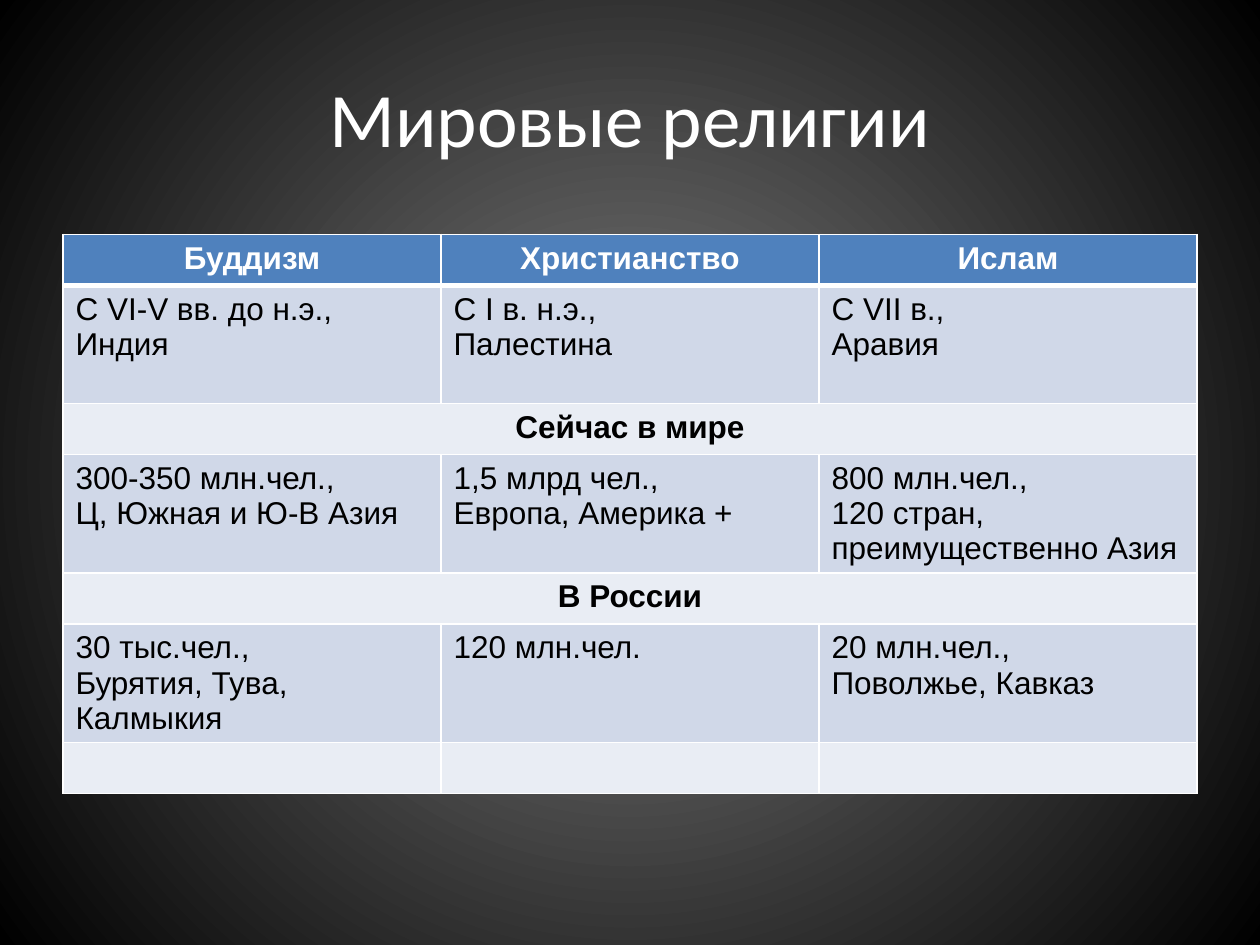
"""Build a slide with a table comparing three world religions."""
import lxml.etree
import pptx
import pptx.dml.color
import pptx.enum.text
import pptx.oxml
import pptx.oxml.ns
import pptx.util

Pt = pptx.util.Pt
COLORS = {
    name: pptx.dml.color.RGBColor.from_string(value)
    for name, value in {
        "center": "7F7F7F", "edge": "000000", "white": "FFFFFF", "black": "000000",
        "header": "4F81BD", "band": "D0D8E8", "light": "E9EDF4",
    }.items()
}
ROWS = [
    ["Буддизм", "Христианство", "Ислам"],
    ["C VI-V вв. до н.э.,\vИндия", "С I в. н.э.,\vПалестина", "С VII в.,\vАравия"],
    ["Сейчас в мире"],
    ["300-350 млн.чел.,\vЦ, Южная и Ю-В Азия", "1,5 млрд чел.,\vЕвропа, Америка +",
     "800 млн.чел.,\n120 стран, преимущественно Азия"],
    ["В России"],
    ["30 тыс.чел.,\vБурятия, Тува, Калмыкия", "120 млн.чел.",
     "20 млн.чел.,\nПоволжье, Кавказ"],
    ["", "", ""],
]
COLUMN_WIDTH, SHORT_ROW, TALL_ROW = 216, 29.2, 67.3
NAMESPACE = pptx.oxml.ns.nsdecls("a")


def format_paragraph(paragraph, font, size, color, bold, centered):
    paragraph.font.name = font
    paragraph.font.size = Pt(size)
    paragraph.font.bold = bold
    paragraph.font.color.rgb = COLORS[color]
    alignment = pptx.enum.text.PP_ALIGN
    paragraph.alignment = alignment.CENTER if centered else alignment.LEFT


def add_border(cell, side, width):
    cell._tc.get_or_add_tcPr().append(pptx.oxml.parse_xml(
        f'<a:ln{side} {NAMESPACE} w="{Pt(width)}"><a:solidFill>'
        f'<a:srgbClr val="{COLORS["white"]}"/></a:solidFill></a:ln{side}>'))


presentation = pptx.Presentation()
presentation.slide_width, presentation.slide_height = Pt(720), Pt(540)
slide = presentation.slides.add_slide(presentation.slide_layouts[5])

fill = slide.background.fill
fill.gradient()
for stop, color in zip(fill.gradient_stops, ("center", "edge")):
    stop.color.rgb = COLORS[color]
linear = slide.background._cSld.find(".//" + pptx.oxml.ns.qn("a:lin"))
linear.getparent().replace(linear, pptx.oxml.parse_xml(
    f'<a:path {NAMESPACE} path="circle">'
    '<a:fillToRect l="50000" t="50000" r="50000" b="50000"/></a:path>'))

title = slide.shapes.title
title.left, title.top, title.width, title.height = Pt(36), Pt(21.6), Pt(648), Pt(90)
title.text_frame.text = "Мировые религии"
title.text_frame.vertical_anchor = pptx.enum.text.MSO_ANCHOR.MIDDLE
format_paragraph(title.text_frame.paragraphs[0], "Calibri", 44, "white", False, True)

table = slide.shapes.add_table(
    len(ROWS), 3, Pt(36), Pt(134), Pt(3 * COLUMN_WIDTH), Pt(4 * SHORT_ROW + 3 * TALL_ROW)
).table
for column in table.columns:
    column.width = Pt(COLUMN_WIDTH)

for row_index, texts in enumerate(ROWS):
    is_header = row_index == 0
    is_band = row_index % 2 == 1
    row = table.rows[row_index]
    row.height = Pt(TALL_ROW if is_band else SHORT_ROW)
    if len(texts) == 1:
        row.cells[0].merge(row.cells[2])
    for cell in row.cells:
        for side in "LRTB":
            heavy = (is_header and side == "B") or (row_index == 1 and side == "T")
            add_border(cell, side, 3 if heavy else 1)
        cell.fill.solid()
        cell.fill.fore_color.rgb = COLORS[
            "header" if is_header else "band" if is_band else "light"]
    for cell, text in zip(row.cells, texts):
        cell.text = text
        for paragraph in cell.text_frame.paragraphs:
            format_paragraph(paragraph, "Arial", 18, "white" if is_header else "black",
                             not is_band, not is_band)

presentation.save("out.pptx")
